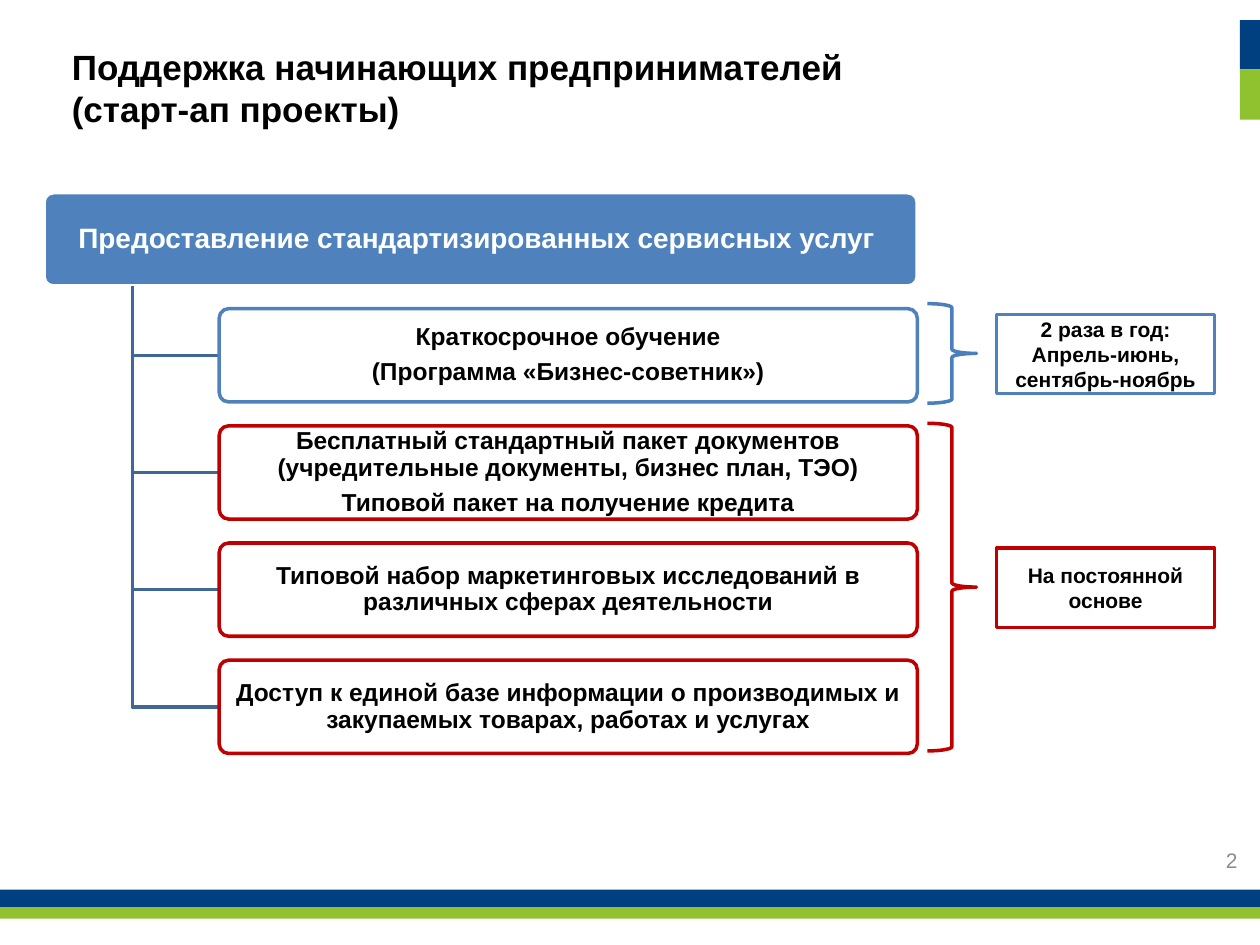
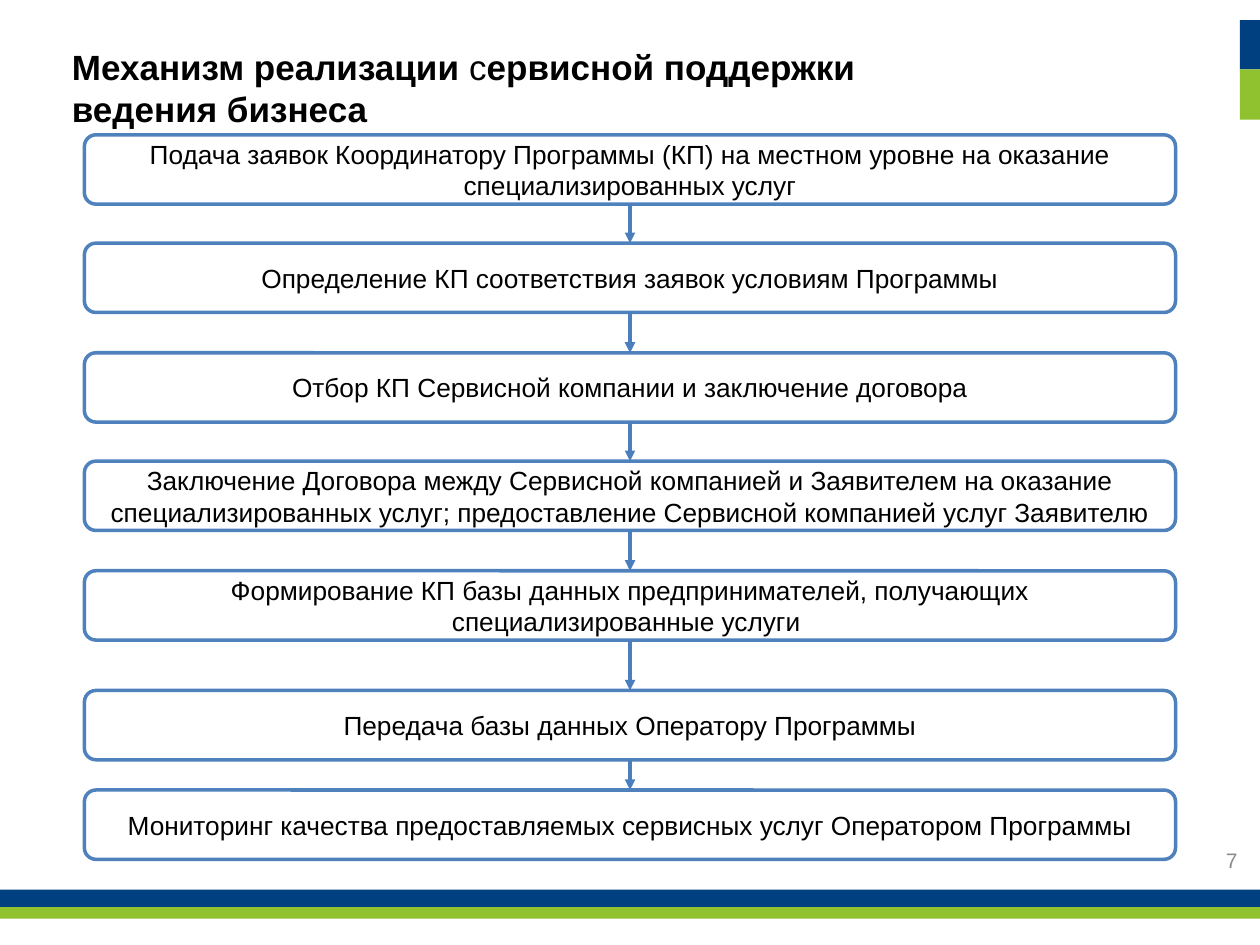
from lxml import etree
from pptx import Presentation
from pptx.dml.color import RGBColor
from pptx.enum.shapes import MSO_CONNECTOR, MSO_SHAPE
from pptx.enum.text import MSO_ANCHOR, MSO_AUTO_SIZE, PP_ALIGN
from pptx.oxml.ns import qn
from pptx.util import Inches, Pt

RECT, ROUND, BRACE = MSO_SHAPE.RECTANGLE, MSO_SHAPE.ROUNDED_RECTANGLE, MSO_SHAPE.RIGHT_BRACE
STRAIGHT = MSO_CONNECTOR.STRAIGHT
LEFT, CENTER, RIGHT = PP_ALIGN.LEFT, PP_ALIGN.CENTER, PP_ALIGN.RIGHT
TOP, MIDDLE = MSO_ANCHOR.TOP, MSO_ANCHOR.MIDDLE
FIXED = MSO_AUTO_SIZE.NONE

NAVY = RGBColor(0x00, 0x40, 0x80)
GREEN = RGBColor(0x90, 0xC1, 0x2F)
BLUE = RGBColor(0x4F, 0x81, 0xBD)
EDGE = RGBColor(0x4B, 0x7E, 0xBC)
STEEL = RGBColor(0x3F, 0x67, 0x97)
RED = RGBColor(0xC0, 0x00, 0x00)
GRAY = RGBColor(0x8C, 0x8C, 0x8C)
BLACK = RGBColor(0x00, 0x00, 0x00)
WHITE = RGBColor(0xFF, 0xFF, 0xFF)
FONT = "Arial"

BANDS = [
    ((0, 7.06, 10, 0.15), NAVY),
    ((0, 7.2, 10, 0.09), GREEN),
    ((9.84, 0.16, 0.16, 0.39), NAVY),
    ((9.84, 0.55, 0.16, 0.4), GREEN),
]
SERVICES = [
    (["Краткосрочное обучение", "(Программа «Бизнес-советник»)"], BLUE),
    (["Бесплатный стандартный пакет документов (учредительные документы, бизнес план, ТЭО)",
      "Типовой пакет на получение кредита"], RED),
    (["Типовой набор маркетинговых исследований в различных сферах деятельности"], RED),
    (["Доступ к единой базе информации о производимых и закупаемых товарах, работах и услугах"], RED),
]
STEPS = [
    (1.07, "Подача заявок Координатору Программы (КП) на местном уровне на оказание "
           "специализированных услуг"),
    (1.93, "Определение КП соответствия заявок условиям Программы"),
    (2.8, "Отбор КП Сервисной компании и заключение договора"),
    (3.66, "Заключение Договора между Сервисной компанией и Заявителем на оказание "
           "специализированных услуг; предоставление Сервисной компанией услуг Заявителю"),
    (4.53, "Формирование КП базы данных предпринимателей, получающих специализированные услуги "),
    (5.48, "Передача базы данных Оператору Программы"),
    (6.27, "Мониторинг качества предоставляемых сервисных услуг Оператором Программы"),
]


def inch(box):
    """Turn a box of numbers into lengths."""
    return [Inches(n) for n in box]


def write(frame, lines, size, color=BLACK, bold=False, align=CENTER, anchor=MIDDLE):
    """Fill a text frame; a line is a string or a list of (text, bold) runs."""
    frame.word_wrap = True
    frame.auto_size = FIXED
    frame.vertical_anchor = anchor
    for i, line in enumerate(lines):
        para = frame.paragraphs[0] if i == 0 else frame.add_paragraph()
        para.alignment = align
        for text, heavy in [(line, bold)] if isinstance(line, str) else line:
            run = para.add_run()
            run.text = text
            font = run.font
            font.name, font.size, font.bold = FONT, Pt(size), heavy
            font.color.rgb = color


def draw(slide, kind, box, fill=None, edge=None):
    """Add a preset shape with a flat fill and edge."""
    shape = slide.shapes.add_shape(kind, *inch(box))
    paint(shape, fill, edge)
    return shape


def paint(shape, fill, edge):
    """Set fill, edge and no shadow on a shape."""
    shape.shadow.inherit = False
    if fill is None:
        shape.fill.background()
    else:
        shape.fill.solid()
        shape.fill.fore_color.rgb = fill
    if edge is None:
        shape.line.fill.background()
    else:
        shape.line.color.rgb = edge
        shape.line.width = Pt(2)


def brand(master, slide):
    """Put the colour bands on the master."""
    for i, (box, color) in enumerate(BANDS):
        band = draw(slide, RECT, box, color).element
        band.nvSpPr.cNvPr.set("id", str(100 + i))
        master.shapes.element.append(band)


def head(slide, width, lines, number):
    """Place the title and the page number."""
    title = slide.shapes.title
    title.left, title.top, title.width, title.height = inch((0.47, 0.31, width, 0.77))
    write(title.text_frame, lines, 20, bold=True, align=LEFT, anchor=TOP)
    page = slide.shapes.add_textbox(*inch((7.59, 6.63, 2.33, 0.4)))
    write(page.text_frame, [str(number)], 12, GRAY, align=RIGHT)


def card(slide, box, lines, size, color, fill, edge):
    """Draw one rounded card of the service tree."""
    shape = draw(slide, ROUND, box, fill, edge)
    shape.adjustments[0] = 0.1
    frame = shape.text_frame
    frame.margin_left = frame.margin_right = Inches(0.03)
    frame.margin_top = frame.margin_bottom = Inches(0.02)
    write(frame, lines, size, color, bold=True)
    for para in frame.paragraphs:
        para.line_spacing = 0.9
        para.space_after = Pt(size * 0.35)


def branch(slide, x, y, right, down):
    """Draw an elbow line down and to the right."""
    pen = slide.shapes.build_freeform(Inches(x), Inches(y))
    pen.add_line_segments([inch((x, down)), inch((right, down))], close=False)
    paint(pen.convert_to_shape(), None, STEEL)


def tree(slide, box):
    """Draw the header card with its services below."""
    x, y, width, high = box
    card(slide, (x, y, width, high), ["Предоставление стандартизированных сервисных услуг "],
         16, WHITE, BLUE, WHITE)
    left = x + 1.39
    for i, (lines, edge) in enumerate(SERVICES):
        top = y + 0.92 + 0.93 * i
        branch(slide, x + 0.7, y + high, left, top + high / 2)
        card(slide, (left, top, width - 1.39, high), lines, 14, BLACK, WHITE, edge)


def term(slide, box, lines, line, edge):
    """Draw a brace and the timing note at its middle."""
    x, y, width, high = box
    draw(slide, BRACE, (x, y, 0.39, high), edge=line)
    note = draw(slide, RECT, (x + 0.55, y + high / 2 - 0.31, width - 0.55, 0.63), WHITE, edge)
    write(note.text_frame, lines, 12, bold=True)


def arrow(slide, start, end):
    """Join two boxes, bottom to top, with an arrow."""
    link = slide.shapes.add_connector(STRAIGHT, 0, 0, 0, 0)
    link.begin_connect(start, 2)
    link.end_connect(end, 0)
    link.line.color.rgb = EDGE
    link.line.width = Pt(2)
    props = link.element.spPr
    etree.SubElement(props.find(qn("a:ln")), qn("a:tailEnd"), type="triangle")
    etree.SubElement(props, qn("a:effectLst"))


def flow(slide, x, width, high):
    """Draw the chain of steps."""
    boxes = []
    for top, text in STEPS:
        step = draw(slide, ROUND, (x, top, width, high), WHITE, BLUE)
        write(step.text_frame, [text], 15)
        boxes.append(step)
    for start, end in zip(boxes, boxes[1:]):
        arrow(slide, start, end)


def main():
    """Build and save the deck."""
    deck = Presentation()
    deck.slide_width, deck.slide_height = Inches(10), Inches(7.5)
    plain = deck.slide_layouts[5]

    slide = deck.slides.add_slide(plain)
    brand(deck.slide_master, slide)
    head(slide, 6.61, ["Поддержка начинающих предпринимателей", "(старт-ап проекты)"], 2)
    tree(slide, (0.35, 1.53, 6.93, 0.74))
    term(slide, (7.36, 3.36, 2.28, 2.6), ["На постоянной основе"], RED, RED)
    term(slide, (7.36, 2.41, 2.28, 0.79), ["2 раза в год:", "Апрель-июнь, сентябрь-ноябрь"], EDGE, BLUE)

    slide = deck.slides.add_slide(plain)
    first = [("Механизм реализации ", True), ("с", False), ("ервисной поддержки", True)]
    head(slide, 8.05, [first, "ведения бизнеса"], 7)
    flow(slide, 0.67, 8.66, 0.55)

    deck.save("out.pptx")


if __name__ == "__main__":
    main()
